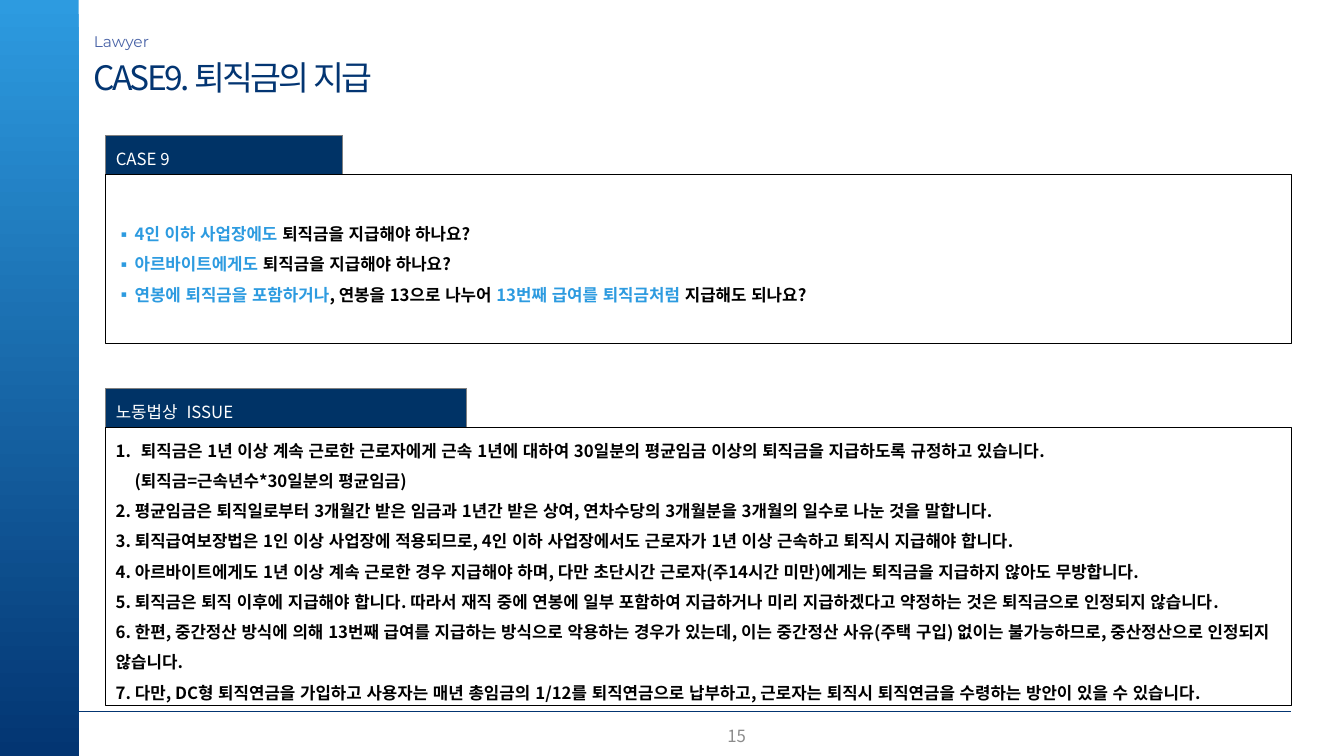
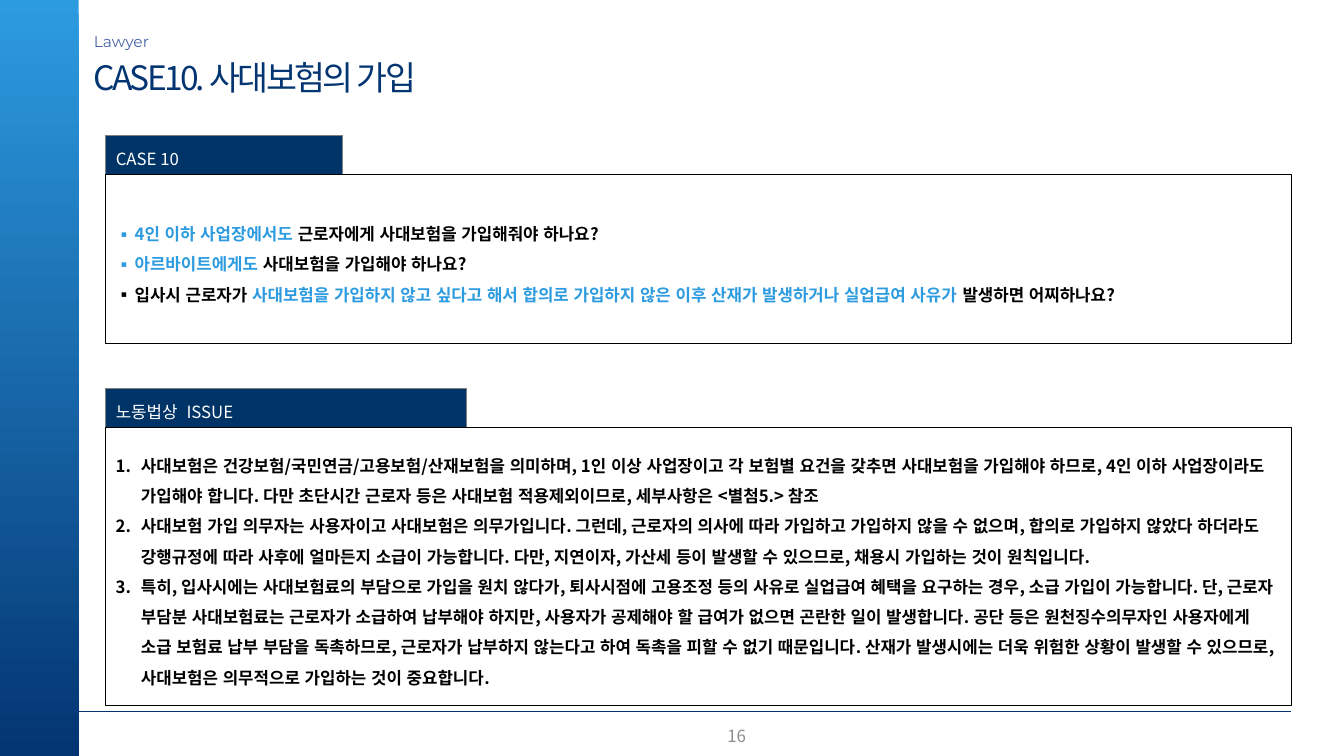
from dataclasses import dataclass

from lxml import etree
from pptx import Presentation
from pptx.dml.color import RGBColor
from pptx.enum.lang import MSO_LANGUAGE_ID as Language
from pptx.enum.shapes import MSO_CONNECTOR as Connector, MSO_SHAPE as Preset
from pptx.enum.text import MSO_ANCHOR as Anchor, MSO_AUTO_SIZE as AutoSize, PP_ALIGN as Align
from pptx.oxml.ns import qn
from pptx.util import Pt

# Colours and fonts
WHITE = RGBColor(0xFF, 0xFF, 0xFF)
BLACK = RGBColor(0, 0, 0)
SKY = RGBColor(0x2D, 0x9B, 0xE0)
NAVY = RGBColor(0x03, 0x35, 0x72)
TAB_BLUE = RGBColor(0x00, 0x33, 0x66)
BRAND_BLUE = RGBColor(0x49, 0x63, 0xA7)
GREY = RGBColor(0x80, 0x80, 0x80)
NUMBER_GREY = RGBColor(0x8C, 0x8C, 0x8C)
KOREAN_FONT = "Noto Sans CJK KR"
BRAND_FONT = "Montserrat"

# Page geometry in points
SLIDE_WIDTH, SLIDE_HEIGHT = 960, 540
BAND_WIDTH = 56.2
HEADER_LEFT = 67
PANEL_LEFT, PANEL_WIDTH = 75.6, 846.7
TAB_HEIGHT, TAB_RISE = 33.8, 28.1
FOOTER_LINE_TOP = 508.3
FIRST_NUMBER = 15


@dataclass(frozen=True)
class Run:
    text: str
    color: RGBColor = BLACK
    size: float = 12
    bold: bool = True
    font: str = KOREAN_FONT
    spacing: float = 0


@dataclass(frozen=True)
class Item:
    runs: tuple[Run, ...]
    indent: float = 0
    hanging: float = 0
    bullet: str = ""
    numbered: bool = False
    line_spacing: float = 1.5
    align: Align = Align.LEFT


@dataclass(frozen=True)
class Panel:
    top: float
    height: float
    tab_width: float


@dataclass(frozen=True)
class Case:
    number: int
    topic: str
    questions: tuple[Item, ...]
    issues: tuple[Item, ...]


CASE_PANEL = Panel(124.6, 121, 169.2)
ISSUE_PANEL = Panel(305.3, 198.7, 257.8)


def question(*runs: Run) -> Item:
    return Item(runs, 13.5, 13.5, bullet="▪")


def numbered(text: str) -> Item:
    return Item((Run(text),), 18, 18, numbered=True)


def plain(text: str, indent: float = 0) -> Item:
    return Item((Run(text),), indent)


def line(*runs: Run, align: Align = Align.LEFT) -> Item:
    return Item(runs, line_spacing=1, align=align)


# Slide content
CASES = (
    Case(
        9,
        "퇴직금의 지급",
        (
            question(Run("4인 이하 사업장에도 ", SKY), Run("퇴직금을 지급해야 하나요?")),
            question(Run("아르바이트에게도", SKY), Run(" 퇴직금을 지급해야 하나요?")),
            question(
                Run("연봉에 퇴직금을 포함하거나", SKY),
                Run(", 연봉을 13으로 나누어 "),
                Run("13번째 급여를 퇴직금처럼 ", SKY),
                Run("지급해도 되나요?"),
            ),
        ),
        (
            numbered("퇴직금은 1년 이상 계속 근로한 근로자에게 근속 1년에 대하여 30일분의 평균임금 이상의 "
                     "퇴직금을 지급하도록 규정하고 있습니다."),
            plain("(퇴직금=근속년수*30일분의 평균임금)", indent=13.5),
            plain("2. 평균임금은 퇴직일로부터 3개월간 받은 임금과 1년간 받은 상여, 연차수당의 3개월분을 "
                  "3개월의 일수로 나눈 것을 말합니다."),
            plain("3. 퇴직급여보장법은 1인 이상 사업장에 적용되므로, 4인 이하 사업장에서도 근로자가 "
                  "1년 이상 근속하고 퇴직시 지급해야 합니다."),
            plain("4. 아르바이트에게도 1년 이상 계속 근로한 경우 지급해야 하며, 다만 초단시간 "
                  "근로자(주14시간 미만)에게는 퇴직금을 지급하지 않아도 무방합니다."),
            plain("5. 퇴직금은 퇴직 이후에 지급해야 합니다. 따라서 재직 중에 연봉에 일부 포함하여 "
                  "지급하거나 미리 지급하겠다고 약정하는 것은 퇴직금으로 인정되지 않습니다."),
            plain("6. 한편, 중간정산 방식에 의해 13번째 급여를 지급하는 방식으로 악용하는 경우가 있는데, "
                  "이는 중간정산 사유(주택 구입) 없이는 불가능하므로, 중산정산으로 인정되지 않습니다."),
            plain("7. 다만, DC형 퇴직연금을 가입하고 사용자는 매년 총임금의 1/12를 퇴직연금으로 납부하고, "
                  "근로자는 퇴직시 퇴직연금을 수령하는 방안이 있을 수 있습니다."),
        ),
    ),
    Case(
        10,
        "사대보험의 가입",
        (
            question(Run("4인 이하 사업장에서도 ", SKY), Run("근로자에게 사대보험을 가입해줘야 하나요?")),
            question(Run("아르바이트에게도 ", SKY), Run("사대보험을 가입해야 하나요?")),
            question(
                Run("입사시 근로자가 "),
                Run("사대보험을 가입하지 않고 싶다고 해서 합의로 가입하지 않은 이후 산재가 발생하거나 "
                    "실업급여 사유가 ", SKY),
                Run("발생하면 어찌하나요?"),
            ),
        ),
        (
            numbered("사대보험은 건강보험/국민연금/고용보험/산재보험을 의미하며, 1인 이상 사업장이고 각 보험별 "
                     "요건을 갖추면 사대보험을 가입해야 하므로, 4인 이하 사업장이라도 가입해야 합니다. 다만 "
                     "초단시간 근로자 등은 사대보험 적용제외이므로, 세부사항은 <별첨5.> 참조"),
            numbered("사대보험 가입 의무자는 사용자이고 사대보험은 의무가입니다. 그런데, 근로자의 의사에 따라 "
                     "가입하고 가입하지 않을 수 없으며, 합의로 가입하지 않았다 하더라도 강행규정에 따라 사후에 "
                     "얼마든지 소급이 가능합니다. 다만, 지연이자, 가산세 등이 발생할 수 있으므로, 채용시 "
                     "가입하는 것이 원칙입니다."),
            numbered("특히, 입사시에는 사대보험료의 부담으로 가입을 원치 않다가, 퇴사시점에 고용조정 등의 사유로 "
                     "실업급여 혜택을 요구하는 경우, 소급 가입이 가능합니다. 단, 근로자 부담분 사대보험료는 "
                     "근로자가 소급하여 납부해야 하지만, 사용자가 공제해야 할 급여가 없으면 곤란한 일이 "
                     "발생합니다. 공단 등은 원천징수의무자인 사용자에게 소급 보험료 납부 부담을 독촉하므로, "
                     "근로자가 납부하지 않는다고 하여 독촉을 피할 수 없기 때문입니다. 산재가 발생시에는 더욱 "
                     "위험한 상황이 발생할 수 있으므로, 사대보험은 의무적으로 가입하는 것이 중요합니다."),
        ),
    ),
)


# Text helpers
def add_run(paragraph, run: Run) -> None:
    text_run = paragraph.add_run()
    text_run.text = run.text
    font = text_run.font
    font.name, font.size, font.bold = run.font, Pt(run.size), run.bold
    font.color.rgb = run.color
    font.language_id = Language.KOREAN
    properties = text_run._r.get_or_add_rPr()
    if run.spacing:
        properties.set("spc", str(round(run.spacing * 100)))
    etree.SubElement(properties, qn("a:ea")).set("typeface", run.font)


def format_paragraph(paragraph, item: Item) -> None:
    properties = paragraph._p.get_or_add_pPr()
    properties.set("marL", str(Pt(item.indent)))
    properties.set("indent", str(Pt(-item.hanging)))
    if item.bullet:
        etree.SubElement(properties, qn("a:buFont")).set("typeface", KOREAN_FONT)
        etree.SubElement(properties, qn("a:buChar")).set("char", item.bullet)
    elif item.numbered:
        etree.SubElement(properties, qn("a:buAutoNum")).set("type", "arabicPeriod")
    paragraph.alignment = item.align
    paragraph.line_spacing = item.line_spacing


def write(shape, items: tuple[Item, ...], anchor: Anchor = Anchor.MIDDLE) -> None:
    frame = shape.text_frame
    frame.word_wrap = True
    frame.vertical_anchor = anchor
    for index, item in enumerate(items):
        paragraph = frame.add_paragraph() if index else frame.paragraphs[0]
        format_paragraph(paragraph, item)
        for run in item.runs:
            add_run(paragraph, run)


# Shape helpers
def add_rectangle(slide, left: float, top: float, width: float, height: float):
    shape = slide.shapes.add_shape(Preset.RECTANGLE, Pt(left), Pt(top), Pt(width), Pt(height))
    shape.shadow.inherit = False
    return shape


def add_box(slide, left: float, top: float, width: float, height: float,
            fill: RGBColor, outline: RGBColor, items: tuple[Item, ...]) -> None:
    shape = add_rectangle(slide, left, top, width, height)
    shape.fill.solid()
    shape.fill.fore_color.rgb = fill
    shape.line.color.rgb = outline
    shape.line.width = Pt(0.5)
    write(shape, items)


def add_text(slide, left: float, top: float, width: float, height: float,
             item: Item, anchor: Anchor = Anchor.MIDDLE):
    box = slide.shapes.add_textbox(Pt(left), Pt(top), Pt(width), Pt(height))
    write(box, (item,), anchor)
    return box.text_frame


def add_panel(slide, panel: Panel, label: tuple[Run, ...], items: tuple[Item, ...]) -> None:
    tab_item = Item(label, 7.2, 7.2, line_spacing=1)
    add_box(slide, PANEL_LEFT, panel.top - TAB_RISE, panel.tab_width, TAB_HEIGHT,
            TAB_BLUE, GREY, (tab_item,))
    add_box(slide, PANEL_LEFT, panel.top, PANEL_WIDTH, panel.height, WHITE, BLACK, items)


# Shared band, footer and header
def add_frame(slide, page_number: int) -> None:
    band = add_rectangle(slide, 0, 0, BAND_WIDTH, SLIDE_HEIGHT)
    band.line.fill.background()
    band.fill.gradient()
    band.fill.gradient_angle = 270
    for stop, color, position in zip(band.fill.gradient_stops, (SKY, NAVY), (0, 1)):
        stop.color.rgb = color
        stop.position = position

    rule = slide.shapes.add_connector(
        Connector.STRAIGHT, Pt(BAND_WIDTH), Pt(FOOTER_LINE_TOP),
        Pt(PANEL_LEFT + PANEL_WIDTH), Pt(FOOTER_LINE_TOP))
    rule.line.color.rgb = NAVY
    rule.line.width = Pt(0.75)
    etree.SubElement(rule._element.spPr, qn("a:effectLst"))

    number = Run(str(page_number), NUMBER_GREY, bold=False)
    add_text(slide, 324, 511.2, 216, 28.8, line(number, align=Align.RIGHT))


def add_header(slide, title: str) -> None:
    title_run = Run(title, NAVY, size=24, bold=False, spacing=-2)
    frame = add_text(slide, HEADER_LEFT, 41, 635.8, 28.8, line(title_run))
    frame.margin_left = frame.margin_right = frame.margin_top = frame.margin_bottom = 0
    frame.auto_size = AutoSize.SHAPE_TO_FIT_TEXT

    brand = Run("Lawyer", BRAND_BLUE, size=11, bold=False, font=BRAND_FONT)
    frame = add_text(slide, HEADER_LEFT, 19.4, 48.2, 20.9, line(brand), Anchor.TOP)
    frame.margin_left = 0
    frame.word_wrap = False
    frame.auto_size = AutoSize.SHAPE_TO_FIT_TEXT


def add_case_slide(presentation, case: Case, page_number: int) -> None:
    slide = presentation.slides.add_slide(presentation.slide_layouts[6])
    add_frame(slide, page_number)
    add_header(slide, f"CASE{case.number}. {case.topic}")
    issue_label = (
        Run("노동법상", WHITE, bold=False),
        Run(" ", WHITE, bold=False, spacing=3),
        Run("ISSUE", WHITE, bold=False),
    )
    add_panel(slide, ISSUE_PANEL, issue_label, case.issues)
    add_panel(slide, CASE_PANEL, (Run(f"CASE {case.number}", WHITE, bold=False),), case.questions)


def main() -> None:
    presentation = Presentation()
    presentation.slide_width, presentation.slide_height = Pt(SLIDE_WIDTH), Pt(SLIDE_HEIGHT)
    for page_number, case in enumerate(CASES, FIRST_NUMBER):
        add_case_slide(presentation, case, page_number)
    presentation.save("out.pptx")


if __name__ == "__main__":
    main()
